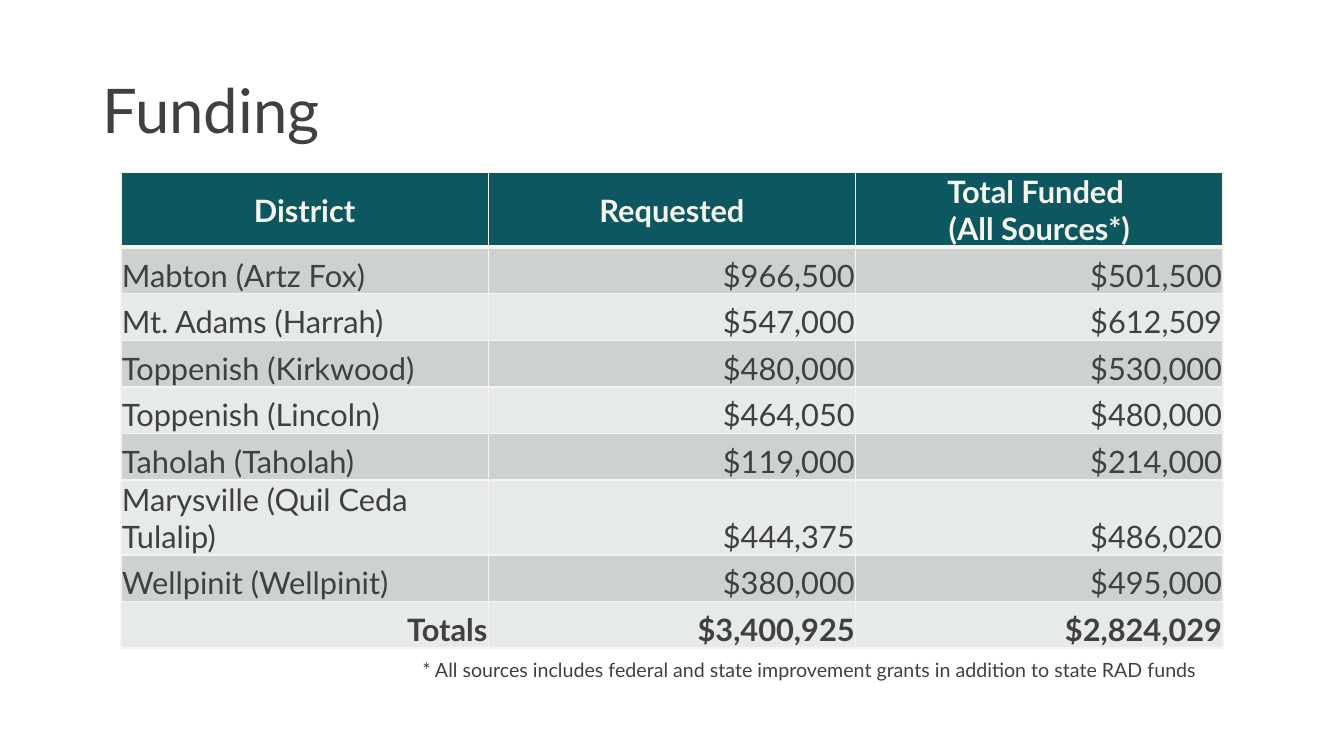
from lxml.etree import SubElement
from pptx import Presentation
from pptx.dml.color import RGBColor
from pptx.enum.text import MSO_ANCHOR, MSO_AUTO_SIZE, PP_ALIGN
from pptx.oxml.ns import qn
from pptx.util import Inches, Pt

SLIDE_WIDTH, SLIDE_HEIGHT = Inches(13.33), Inches(7.5)
FONT = "Lato"
INK, CREAM, TEAL = "40403D", "F7F5EB", "0D5761"
BANDS = ("CCD1D2", "E7EAEA")
FUNDING = [
    ("District", "Requested", "Total Funded \n(All Sources*)"),
    ("Mabton (Artz Fox)", "$966,500", "$501,500"),
    ("Mt. Adams (Harrah)", "$547,000", "$612,509"),
    ("Toppenish (Kirkwood)", "$480,000", "$530,000"),
    ("Toppenish (Lincoln)", "$464,050", "$480,000"),
    ("Taholah (Taholah)", "$119,000", "$214,000"),
    ("Marysville (Quil Ceda Tulalip)", "$444,375", "$486,020"),
    ("Wellpinit (Wellpinit)", "$380,000", "$495,000"),
    ("Totals", "$3,400,925", "$2,824,029"),
]


def across(percent):
    """Return a share of the slide width."""
    return round(SLIDE_WIDTH * percent / 100)


def down(percent):
    """Return a share of the slide height."""
    return round(SLIDE_HEIGHT * percent / 100)


def color(hex_string):
    """Turn a hex string into a colour."""
    return RGBColor.from_string(hex_string)


def format_text(text_frame, size, text_color=INK, bold=False, align=PP_ALIGN.LEFT):
    """Format every paragraph and run of a text frame."""
    for paragraph in text_frame.paragraphs:
        paragraph.alignment = align
        for run in paragraph.runs:
            run.font.name = FONT
            run.font.size = Pt(size)
            run.font.bold = bold
            run.font.color.rgb = color(text_color)


def add_text(slide, text, left, top, width, height, size, anchor=MSO_ANCHOR.TOP):
    """Add a wrapped text box placed in percent of the slide."""
    shape = slide.shapes.add_textbox(across(left), down(top), across(width), down(height))
    text_frame = shape.text_frame
    text_frame.word_wrap = True
    text_frame.vertical_anchor = anchor
    text_frame.text = text
    format_text(text_frame, size)
    return shape


def add_borders(cell, bottom_width):
    """Draw the four cell borders, with a chosen bottom width."""
    properties = cell._tc.get_or_add_tcPr()
    for side, width in (("L", 1), ("R", 1), ("T", 1), ("B", bottom_width)):
        line = SubElement(properties, qn(f"a:ln{side}"), w=str(Pt(width)))
        fill = SubElement(line, qn("a:solidFill"))
        SubElement(fill, qn("a:srgbClr"), val=CREAM)


def fill_cell(cell, text, background, bottom_width, anchor, **text_format):
    """Set the text, margins, borders and fill of one cell."""
    cell.margin_left = cell.margin_right = cell.margin_top = Inches(0.01)
    cell.margin_bottom = 0
    cell.vertical_anchor = anchor
    add_borders(cell, bottom_width)
    cell.fill.solid()
    cell.fill.fore_color.rgb = color(background)
    cell.text_frame.text = text
    format_text(cell.text_frame, 22, **text_format)


def add_funding_table(slide, left, top, width, row_height):
    """Add the table with its header, banded rows and totals."""
    row_count, column_count = len(FUNDING), len(FUNDING[0])
    table = slide.shapes.add_table(
        row_count, column_count, across(left), down(top),
        across(width), down(row_height) * row_count,
    ).table
    for row_index, values in enumerate(FUNDING):
        is_totals = row_index == row_count - 1
        for column_index, text in enumerate(values):
            cell = table.cell(row_index, column_index)
            if row_index == 0:
                fill_cell(cell, text, TEAL, 3, MSO_ANCHOR.MIDDLE,
                          text_color=CREAM, bold=True, align=PP_ALIGN.CENTER)
                continue
            align = PP_ALIGN.RIGHT if column_index or is_totals else PP_ALIGN.LEFT
            top_border_row = row_index == 1
            fill_cell(cell, text, BANDS[(row_index - 1) % 2], 1, MSO_ANCHOR.BOTTOM,
                      bold=is_totals, align=align)
            if top_border_row:
                cell._tc.tcPr.find(qn("a:lnT")).set("w", str(Pt(3)))


def main():
    """Build the funding slide."""
    presentation = Presentation()
    presentation.slide_width, presentation.slide_height = SLIDE_WIDTH, SLIDE_HEIGHT
    slide = presentation.slides.add_slide(presentation.slide_layouts[6])
    footnote = add_text(
        slide,
        "* All sources includes federal and state improvement grants in addition to state RAD funds",
        30.68, 86.4, 69.32, 4.53, 14,
    )
    footnote.text_frame.auto_size = MSO_AUTO_SIZE.SHAPE_TO_FIT_TEXT
    add_funding_table(slide, 9, 22.8, 82, 6.16)
    title = add_text(slide, "Funding", 6.9, 5.33, 86.27, 19.33, 44, MSO_ANCHOR.MIDDLE)
    title.text_frame.paragraphs[0].line_spacing = 0.9
    presentation.save("out.pptx")


if __name__ == "__main__":
    main()
